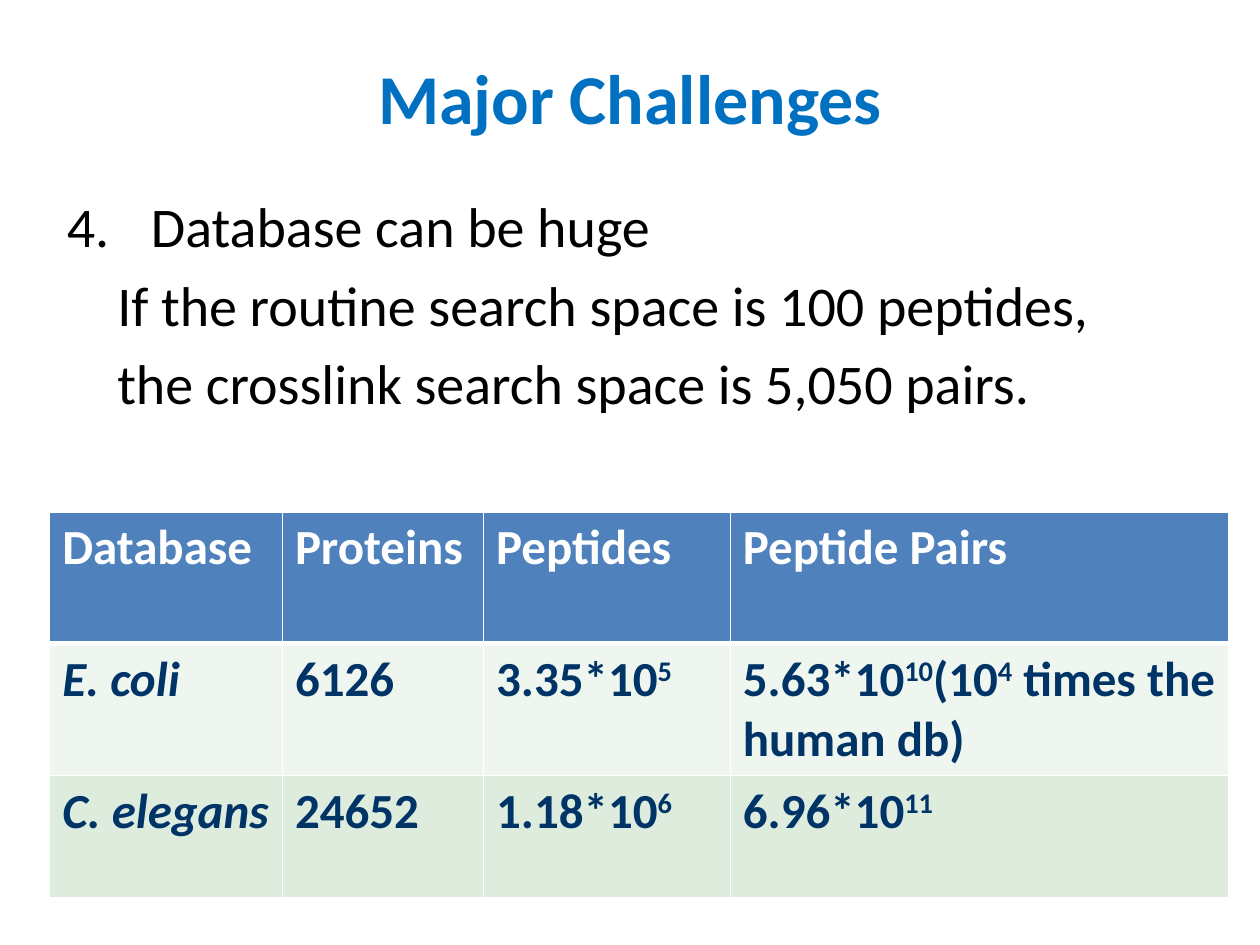
from lxml import etree
from pptx import Presentation
from pptx.dml.color import RGBColor
from pptx.enum.text import MSO_ANCHOR, MSO_AUTO_SIZE, PP_ALIGN
from pptx.oxml.ns import qn
from pptx.util import Pt

MIDDLE = MSO_ANCHOR.MIDDLE
CENTER = PP_ALIGN.CENTER
NO_FIT = MSO_AUTO_SIZE.NONE
BLUE = RGBColor(0x00, 0x70, 0xC0)
BLACK = RGBColor(0x00, 0x00, 0x00)
WHITE = RGBColor(0xFF, 0xFF, 0xFF)
NAVY = RGBColor(0x00, 0x33, 0x66)
HEAD = RGBColor(0x4F, 0x81, 0xBD)
PALE = RGBColor(0xEF, 0xF6, 0xEF)
GREEN = RGBColor(0xDE, 0xEC, 0xDE)

# Each line: text, left margin, first-line indent, start number
LINES = [
    ("Database can be huge", 48, -48, 4),
    ("If the routine search space is 100 peptides,", 28.8, 0, None),
    ("the crosslink search space is 5,050 pairs.", 28.8, 0, None),
]
# A caret switches superscript on or off
ROWS = [
    ["Database", "Proteins", "Peptides", "Peptide Pairs"],
    ["E. coli", "6126", "3.35*10^5", "5.63*10^10^(10^4^ times the human db)"],
    ["C. elegans", "24652", "1.18*10^6", "6.96*10^11"],
]
WIDTHS = [133, 115, 141, 285]
HEIGHTS = [75, 75.6, 69.6]
FILLS = [HEAD, PALE, GREEN]


class Deck:
    font = "Calibri"

    def __init__(self, wide, high):
        self.prs = Presentation()
        self.prs.slide_width, self.prs.slide_height = Pt(wide), Pt(high)
        self.slide = self.prs.slides.add_slide(self.prs.slide_layouts[1])

    def place(self, shape, box):
        for name, value in zip(("left", "top", "width", "height"), box):
            setattr(shape, name, Pt(value))

    def text(self, para, words, size, color, **form):
        for num, part in enumerate(words.split("^")):
            run = para.add_run()
            run.text = part
            for name, value in dict(name=self.font, size=Pt(size), **form).items():
                setattr(run.font, name, value)
            run.font.color.rgb = color
            if num % 2:
                run._r.get_or_add_rPr().set("baseline", "30000")

    def title(self, words, box):
        shape = self.slide.shapes.title
        self.place(shape, box)
        frame = shape.text_frame
        frame.vertical_anchor, frame.auto_size = MIDDLE, NO_FIT
        para = frame.paragraphs[0]
        para.alignment = CENTER
        self.text(para, words, 40, BLUE, bold=True)

    def body(self, lines, box):
        shape = self.slide.placeholders[1]
        self.place(shape, box)
        frame = shape.text_frame
        frame.auto_size = NO_FIT
        for num, (words, left, indent, start) in enumerate(lines):
            para = frame.add_paragraph() if num else frame.paragraphs[0]
            self.text(para, words, 32, BLACK)
            props = para._p.get_or_add_pPr()
            props.set("marL", str(Pt(left)))
            props.set("indent", str(Pt(indent)))
            if start:
                etree.SubElement(props, qn("a:buFont"), typeface="+mj-lt")
                etree.SubElement(props, qn("a:buAutoNum"),
                                 type="arabicPeriod", startAt=str(start))
            else:
                etree.SubElement(props, qn("a:buNone"))

    def edge(self, cell, side, width):
        line = etree.SubElement(cell._tc.get_or_add_tcPr(), qn("a:ln" + side),
                                w=str(Pt(width)))
        fill = etree.SubElement(line, qn("a:solidFill"))
        etree.SubElement(fill, qn("a:srgbClr"), val=str(WHITE))

    def table(self, rows, left, top):
        shape = self.slide.shapes.add_table(
            len(rows), len(WIDTHS), Pt(left), Pt(top),
            Pt(sum(WIDTHS)), Pt(sum(HEIGHTS)))
        grid = shape.table
        for col, width in zip(grid.columns, WIDTHS):
            col.width = Pt(width)
        for y, row in enumerate(rows):
            grid.rows[y].height = Pt(HEIGHTS[y])
            for x, words in enumerate(row):
                cell = grid.cell(y, x)
                for side in "LRTB":
                    thick = (y, side) in ((0, "B"), (1, "T"))
                    self.edge(cell, side, 3 if thick else 1)
                cell.fill.solid()
                cell.fill.fore_color.rgb = FILLS[y]
                self.text(cell.text_frame.paragraphs[0], words, 28,
                          NAVY if y else WHITE,
                          bold=True, italic=y > 0 and x == 0)


def main():
    deck = Deck(720, 540)
    deck.title("Major Challenges", (36, 21.6, 648, 67))
    deck.body(LINES, (31, 106, 648, 164))
    deck.table(ROWS, 28.4, 292.6)
    deck.prs.save("out.pptx")


if __name__ == "__main__":
    main()
